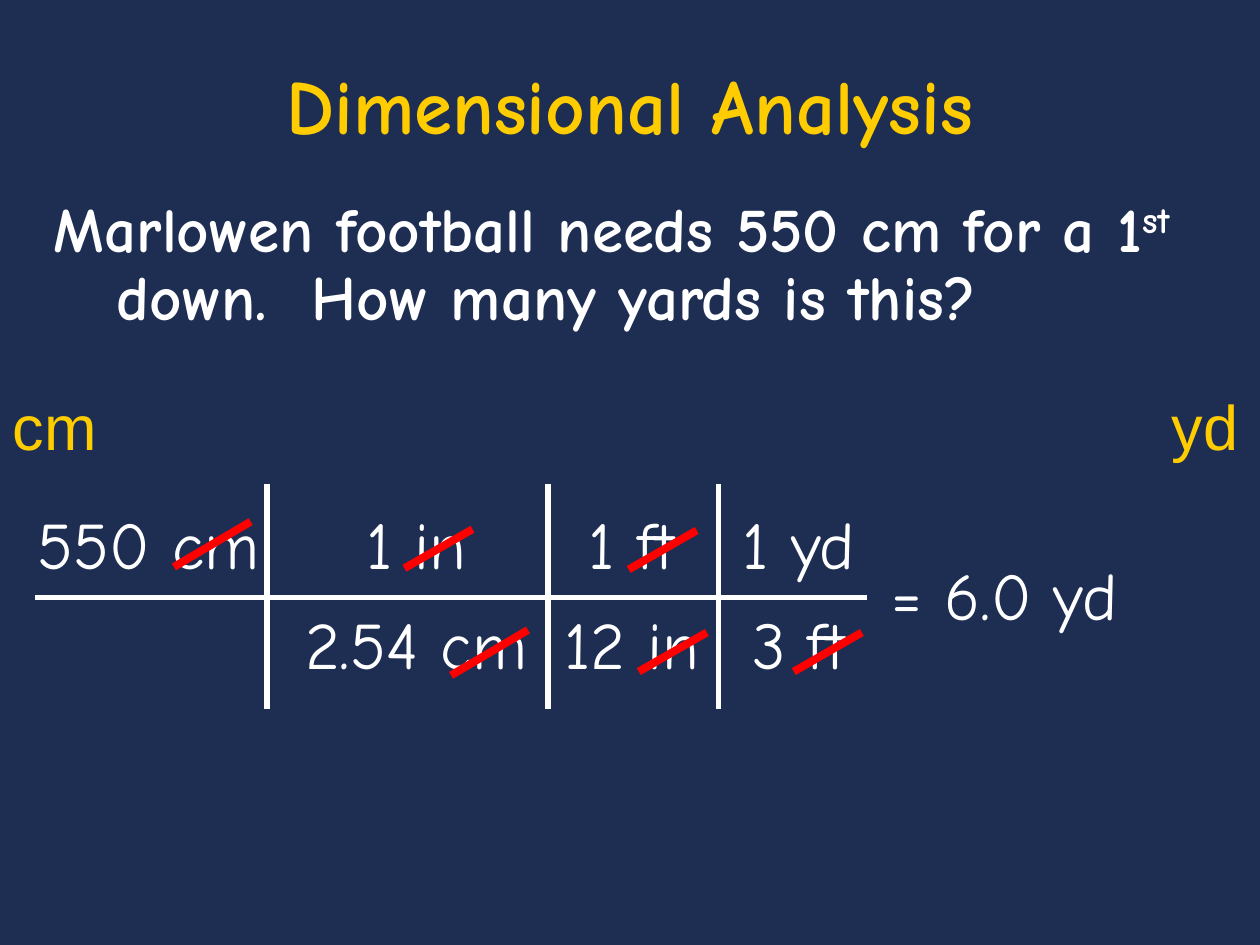
from lxml.etree import SubElement
from pptx import Presentation
from pptx.dml.color import RGBColor
from pptx.enum.shapes import MSO_CONNECTOR
from pptx.enum.text import MSO_ANCHOR, MSO_AUTO_SIZE, PP_ALIGN
from pptx.oxml.ns import qn
from pptx.util import Pt

PX = 9144  # 100 px to the inch
NAVY = RGBColor(0x1E, 0x2E, 0x53)
GOLD = RGBColor(0xFF, 0xCC, 0x00)
WHITE = RGBColor(0xFF, 0xFF, 0xFF)
RED = RGBColor(0xFF, 0x00, 0x00)
HAND = "Comic Neue"


def px(*lengths):
    return [length * PX for length in lengths]


def write(frame, paragraphs, size=38, font=HAND, color=WHITE, bold=False,
          align=PP_ALIGN.LEFT, hanging=0, spacing=None, gaps=(),
          anchor=MSO_ANCHOR.TOP, wrap=True):
    """Fill a frame; each paragraph is a list of (text, baseline) runs."""
    frame.word_wrap = wrap
    frame.auto_size = MSO_AUTO_SIZE.NONE
    frame.vertical_anchor = anchor
    for index, runs in enumerate(paragraphs):
        paragraph = frame.paragraphs[0] if index == 0 else frame.add_paragraph()
        paragraph.alignment = align
        paragraph.line_spacing = spacing
        if index < len(gaps):
            paragraph.space_before = Pt(gaps[index])
        if hanging:
            properties = paragraph._p.get_or_add_pPr()
            properties.set("marL", str(hanging * PX))
            properties.set("indent", str(-hanging * PX))
        for text, baseline in runs:
            run = paragraph.add_run()
            run.text = text
            run.font.name, run.font.size = font, Pt(size)
            run.font.bold, run.font.color.rgb = bold, color
            if baseline:
                run._r.get_or_add_rPr().set("baseline", str(baseline * 1000))


def add_text(slide, box, *lines, **style):
    frame = slide.shapes.add_textbox(*px(*box)).text_frame
    write(frame, [[(line, 0)] for line in lines], **style)


def add_line(slide, start, end, color, width):
    line = slide.shapes.add_connector(MSO_CONNECTOR.STRAIGHT, *px(*start, *end))
    line.line.color.rgb = color
    line.line.width = Pt(width)
    SubElement(line._element.spPr, qn("a:effectLst"))


def place_title(slide, box):
    title = slide.shapes.title
    title.left, title.top, title.width, title.height = px(*box)
    write(title.text_frame, [[("Dimensional Analysis", 0)]], size=44, color=GOLD,
          bold=True, align=PP_ALIGN.CENTER, anchor=MSO_ANCHOR.BOTTOM)


def place_question(slide, box):
    question = [("Marlowen football needs 550 cm for a 1", 0), ("st", 30),
                (" down.  How many yards is this?", 0)]
    write(slide.shapes.add_textbox(*px(*box)).text_frame, [question], size=36,
          bold=True, hanging=50, spacing=0.9, gaps=[7])


def place_units(slide, box):
    """Starting unit at the left edge, wanted unit at the right edge."""
    left, top, width, height = box
    for unit, unit_left, unit_width in (("cm", left, 87), ("yd", left + width - 73, 73)):
        add_text(slide, (unit_left, top, unit_width, height), unit, size=36,
                 font="Arial", color=GOLD, align=PP_ALIGN.CENTER, wrap=False)


def place_conversion(slide, box):
    left, top, width, height = box
    text_top = top + 10

    # Given amount and conversion factors
    add_text(slide, (left - 8, text_top, 211, 86), "550 cm", hanging=50)
    factors = [("1 in", "2.54 cm", 192, 221),
               ("1 ft", "12 in", 406, 135),
               ("1 yd", "3 ft", 545, 122)]
    for numerator, denominator, x, factor_width in factors:
        add_text(slide, (left + x, text_top, factor_width, 177), numerator,
                 denominator, align=PP_ALIGN.CENTER, hanging=50, gaps=[0, 12])

    # Fraction bar and dividers
    bar = top + 90
    add_line(slide, (left, bar), (left + width, bar), WHITE, 3)
    for x in (184, 407, 542):
        add_line(slide, (left + x, top), (left + x, top + height), WHITE, 3)

    # Cancelled units, from lower left to upper right
    strikes = [(61, 36, [(110, 66), (330, 152)]),
               (54, 31, [(293, 67), (471, 68), (479, 149), (602, 149)])]
    for run, rise, starts in strikes:
        for x, y in starts:
            foot = left + x, top + y
            add_line(slide, foot, (foot[0] + run, foot[1] - rise), RED, 4.5)

    # Result
    add_text(slide, (left + width + 10, top + 51, 262, 79), "= 6.0 yd", hanging=50)


def main():
    presentation = Presentation()
    presentation.slide_width, presentation.slide_height = px(1000, 750)
    slide = presentation.slides.add_slide(presentation.slide_layouts[5])
    slide.background.fill.solid()
    slide.background.fill.fore_color.rgb = NAVY
    place_title(slide, (75, 32, 850, 92))
    place_question(slide, (33, 152, 933, 176))
    place_units(slide, (0, 303, 993, 70))
    place_conversion(slide, (28, 384, 660, 179))
    presentation.save("out.pptx")


if __name__ == "__main__":
    main()
